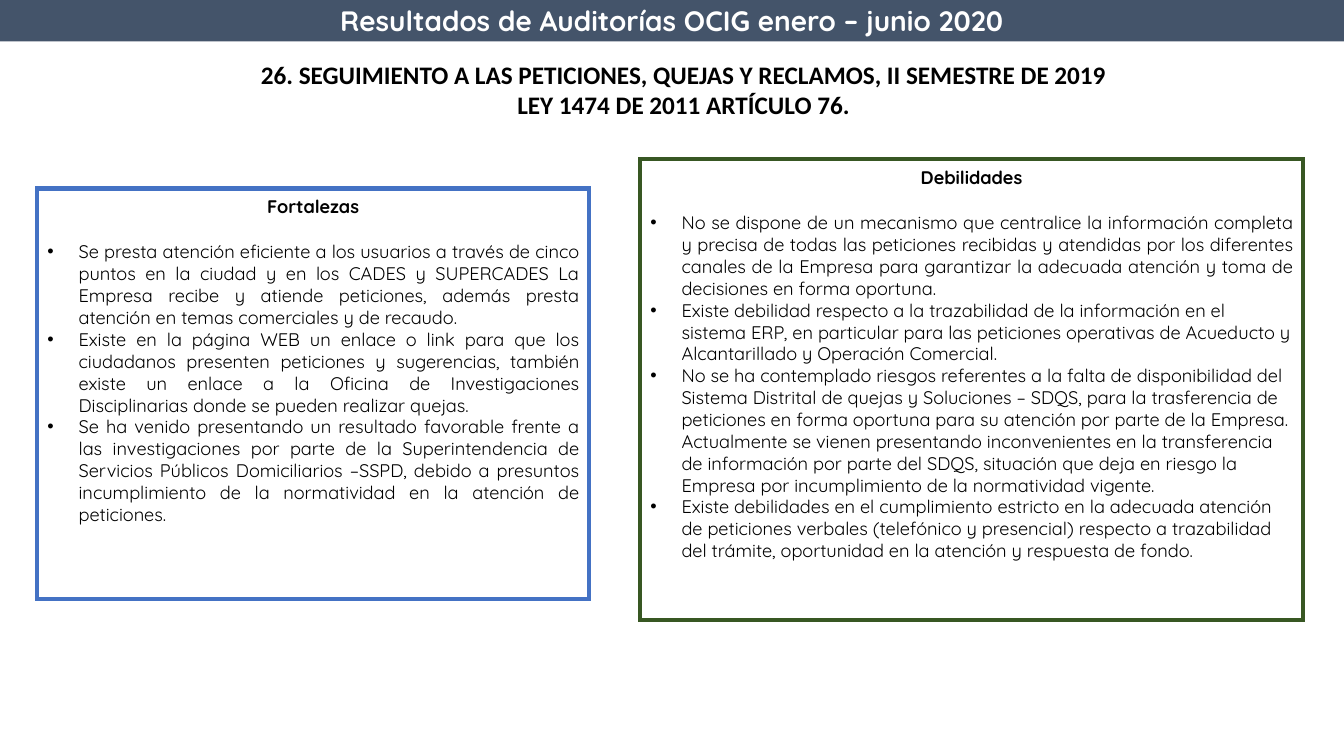
from lxml.etree import SubElement
from pptx import Presentation
from pptx.dml.color import RGBColor
from pptx.enum.text import MSO_ANCHOR, MSO_AUTO_SIZE, PP_ALIGN
from pptx.oxml.ns import qn
from pptx.util import Inches, Pt


def color(value):
    return RGBColor.from_string(value)


def style(paragraph, font_name, size, font_color, bold, alignment):
    paragraph.alignment = alignment
    paragraph.space_before = Pt(0)
    paragraph.font.name = font_name
    paragraph.font.size = Pt(size)
    paragraph.font.bold = bold
    paragraph.font.color.rgb = color(font_color)


presentation = Presentation()
presentation.slide_width = Inches(13.33)
presentation.slide_height = Inches(7.5)
slide = presentation.slides.add_slide(presentation.slide_layouts[3])

banner = slide.shapes.title
banner.left, banner.top, banner.width, banner.height = 0, 0, Inches(13.33), Inches(0.41)
banner.fill.solid()
banner.fill.fore_color.rgb = color("44546A")
banner.text_frame.text = "Resultados de Auditorías OCIG enero – junio 2020"
banner.text_frame.auto_size = MSO_AUTO_SIZE.NONE
banner.text_frame.vertical_anchor = MSO_ANCHOR.MIDDLE
style(banner.text_frame.paragraphs[0], "Quicksand", 20, "FFFFFF", True, PP_ALIGN.CENTER)

JUSTIFY, LEFT = PP_ALIGN.JUSTIFY, PP_ALIGN.LEFT
panels = [
    ("Fortalezas", (0.37, 1.87, 5.47, 4.07), "4472C4", [
        (JUSTIFY, "Se presta atención eficiente a los usuarios a través de cinco puntos en la ciudad y en los "
         "CADES y SUPERCADES La Empresa recibe y atiende peticiones, además presta atención en temas "
         "comerciales y de recaudo."),
        (JUSTIFY, "Existe en la página WEB un enlace o link para que los ciudadanos presenten peticiones y "
         "sugerencias, también existe un enlace a la Oficina de Investigaciones Disciplinarias donde se "
         "pueden realizar quejas."),
        (JUSTIFY, "Se ha venido presentando un resultado favorable frente a las investigaciones por parte de "
         "la Superintendencia de Servicios Públicos Domiciliarios –SSPD, debido a presuntos incumplimiento "
         "de la normatividad en la atención de peticiones."),
    ]),
    ("Debilidades", (6.35, 1.58, 6.57, 4.57), "385723", [
        (JUSTIFY, "No se dispone de un mecanismo que centralice la información completa y precisa de todas "
         "las peticiones recibidas y atendidas por los diferentes canales de la Empresa para garantizar la "
         "adecuada atención y toma de decisiones en forma oportuna."),
        (LEFT, "Existe debilidad respecto a la trazabilidad de la información en el sistema ERP, en "
         "particular para las peticiones operativas de Acueducto y Alcantarillado y Operación Comercial."),
        (LEFT, "No se ha contemplado riesgos referentes a la falta de disponibilidad del Sistema Distrital "
         "de quejas y Soluciones – SDQS, para la trasferencia de peticiones en forma oportuna para su "
         "atención por parte de la Empresa. Actualmente se vienen presentando inconvenientes en la "
         "transferencia de información por parte del SDQS, situación que deja en riesgo la Empresa por "
         "incumplimiento de la normatividad vigente."),
        (LEFT, "Existe debilidades en el cumplimiento estricto en la adecuada atención de peticiones "
         "verbales (telefónico y presencial) respecto a trazabilidad del trámite, oportunidad en la "
         "atención y respuesta de fondo."),
    ]),
]

for panel_index, (heading, box, line_color, findings) in enumerate(panels, start=1):
    panel = slide.placeholders[panel_index]
    panel.left, panel.top, panel.width, panel.height = [Inches(length) for length in box]
    panel.fill.solid()
    panel.fill.fore_color.rgb = color("FFFFFF")
    panel.line.color.rgb = color(line_color)
    panel.line.width = Pt(3)
    SubElement(panel.line._get_or_add_ln(), qn("a:miter"), lim="800000")
    frame = panel.text_frame
    frame.auto_size = MSO_AUTO_SIZE.NONE
    frame.vertical_anchor = MSO_ANCHOR.TOP

    paragraph = frame.paragraphs[0]
    paragraph.text = heading
    properties = paragraph._p.get_or_add_pPr()
    properties.set("marL", "0")
    properties.set("indent", "0")
    SubElement(properties, qn("a:buNone"))
    style(paragraph, "Quicksand", 13, "000000", True, PP_ALIGN.CENTER)
    paragraph.line_spacing = 1.07
    paragraph.space_after = Pt(17)

    for alignment, finding in findings:
        paragraph = frame.add_paragraph()
        paragraph.text = finding
        properties = paragraph._p.get_or_add_pPr()
        properties.set("marL", str(Inches(0.31)))
        properties.set("indent", str(-Inches(0.31)))
        SubElement(properties, qn("a:buFont"), typeface="Arial")
        SubElement(properties, qn("a:buChar"), char="•")
        style(paragraph, "Quicksand", 13, "000000", False, alignment)

subtitle = slide.shapes.add_textbox(Inches(2.37), Inches(0.54), Inches(8.82), Inches(0.71))
subtitle.text_frame.word_wrap = True
subtitle.text_frame.text = (
    "26. SEGUIMIENTO A LAS PETICIONES, QUEJAS Y RECLAMOS, II SEMESTRE DE 2019\n"
    "LEY 1474 DE 2011 ARTÍCULO 76."
)
for paragraph in subtitle.text_frame.paragraphs:
    style(paragraph, "Calibri", 18, "000000", True, PP_ALIGN.CENTER)

presentation.save("out.pptx")
